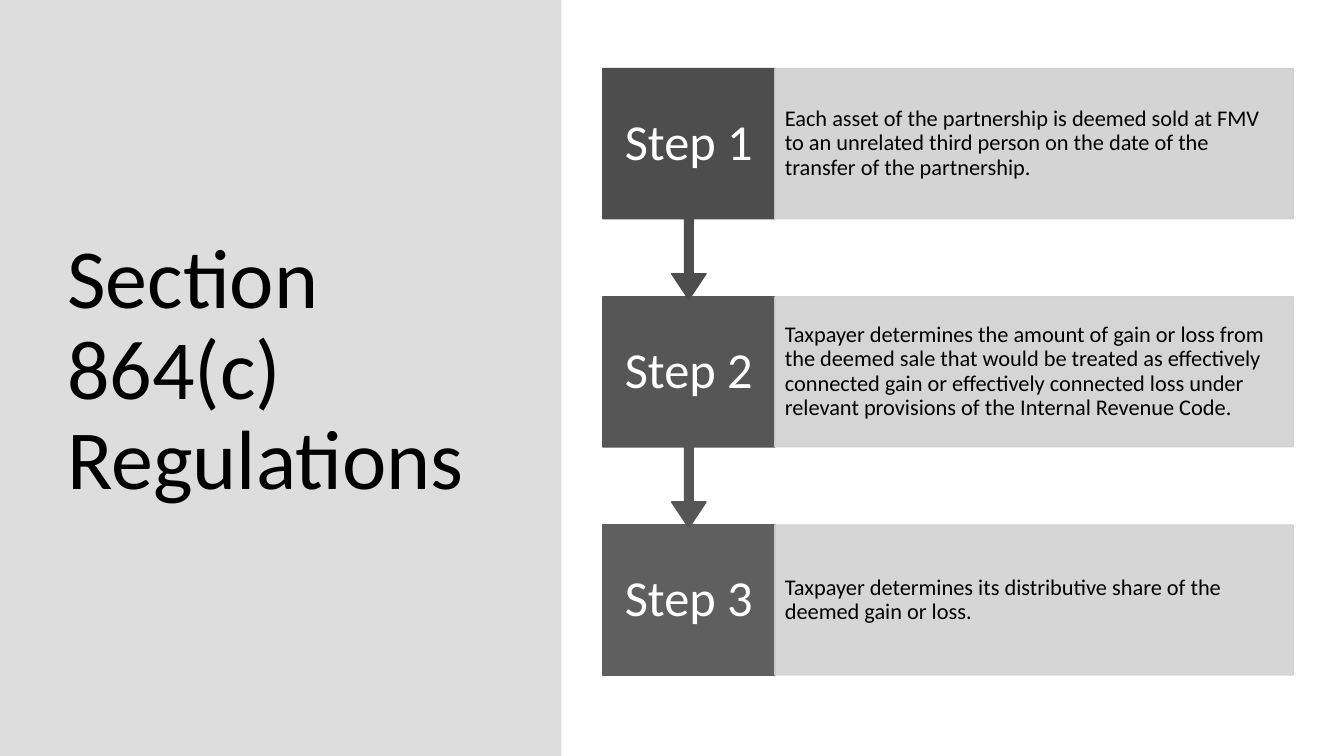
from dataclasses import dataclass

from pptx import Presentation
from pptx.dml.color import RGBColor
from pptx.enum.shapes import MSO_SHAPE as Preset
from pptx.enum.text import MSO_ANCHOR as Anchor, PP_ALIGN as Align
from pptx.oxml.ns import qn
from pptx.oxml.xmlchemy import OxmlElement
from pptx.shapes.autoshape import Shape
from pptx.shapes.shapetree import SlideShapes
from pptx.util import Cm, Pt

COLORS = {
    "panel": "DDDDDD",
    "dark_text": "000000",
    "light_text": "FFFFFF",
}
FONT = "Calibri"
SLIDE_WIDTH, SLIDE_HEIGHT = 33.87, 19.05
PANEL_WIDTH = 14.15
STEP_LEFT, STEP_WIDTH = 15.19, 4.34
DETAIL_WIDTH = 13.06
FIRST_TOP, STEP_PITCH = 1.73, 5.75
BOX_HEIGHT, CALLOUT_HEIGHT = 3.78, 5.82
CALLOUT_ADJUSTMENTS = (0.05, 0.1, 0.15, 0.65)


@dataclass(frozen=True)
class Step:
    label: str
    detail: str
    label_fill: str
    detail_fill: str


STEPS = [
    Step(
        "Step 1",
        "Each asset of the partnership is deemed sold at FMV to an unrelated "
        "third person on the date of the transfer of the partnership.",
        "4D4D4D",
        "D0D0D0",
    ),
    Step(
        "Step 2",
        "Taxpayer determines the amount of gain or loss from the deemed sale "
        "that would be treated as effectively connected gain or effectively "
        "connected loss under relevant provisions of the Internal Revenue Code.",
        "565656",
        "D1D1D1",
    ),
    Step(
        "Step 3",
        "Taxpayer determines its distributive share of the deemed gain or loss.",
        "5F5F5F",
        "D2D2D2",
    ),
]


def add_filled_shape(shapes: SlideShapes, preset: Preset, left: float, top: float,
                     width: float, height: float, color: str) -> Shape:
    shape = shapes.add_shape(preset, Cm(left), Cm(top), Cm(width), Cm(height))
    shape.shadow.inherit = False
    shape.fill.solid()
    shape.fill.fore_color.rgb = RGBColor.from_string(color)
    shape.line.fill.background()
    return shape


def outline(shape: Shape, color: str) -> None:
    shape.line.color.rgb = RGBColor.from_string(color)
    shape.line.width = Pt(1)


def set_opacity(shape: Shape, percent: int) -> None:
    """Apply one opacity to both the fill and the outline."""
    for color in shape._element.spPr.iter(qn("a:srgbClr")):
        alpha = OxmlElement("a:alpha")
        alpha.set("val", str(percent * 1000))
        color.append(alpha)


def write_text(shape: Shape, text: str, size: int, color: str, align: Align = Align.LEFT,
               inset_x: float = 0.25, inset_y: float = 0.13) -> None:
    frame = shape.text_frame
    frame.word_wrap = True
    frame.vertical_anchor = Anchor.MIDDLE
    frame.margin_left = frame.margin_right = Cm(inset_x)
    frame.margin_top = frame.margin_bottom = Cm(inset_y)
    paragraph = frame.paragraphs[0]
    paragraph.text = text
    paragraph.alignment = align
    paragraph.line_spacing = 0.9
    paragraph.font.name = FONT
    paragraph.font.size = Pt(size)
    paragraph.font.color.rgb = RGBColor.from_string(color)


def add_title_panel(shapes: SlideShapes) -> None:
    add_filled_shape(shapes, Preset.RECTANGLE, 0, 0, PANEL_WIDTH, SLIDE_HEIGHT,
                     COLORS["panel"])
    title = shapes.add_textbox(Cm(1.45), Cm(1.73), Cm(10.57), Cm(15.29))
    write_text(title, "Section 864(c) Regulations", 60, COLORS["dark_text"])


def add_step(shapes: SlideShapes, step: Step, top: float, is_last: bool) -> None:
    """Draw a step's label and detail; all but the last point to the next step."""
    preset = Preset.RECTANGLE if is_last else Preset.DOWN_ARROW_CALLOUT
    height = BOX_HEIGHT if is_last else CALLOUT_HEIGHT
    label = add_filled_shape(shapes, preset, STEP_LEFT, top, STEP_WIDTH, height,
                             step.label_fill)
    if not is_last:
        for index, value in enumerate(CALLOUT_ADJUSTMENTS):
            label.adjustments[index] = value
    outline(label, step.label_fill)
    write_text(label, step.label, 36, COLORS["light_text"], Align.CENTER, 0.3, 0.71)

    detail = add_filled_shape(shapes, Preset.RECTANGLE, STEP_LEFT + STEP_WIDTH, top,
                              DETAIL_WIDTH, BOX_HEIGHT, step.detail_fill)
    outline(detail, step.detail_fill)
    set_opacity(detail, 90)
    write_text(detail, step.detail, 16, COLORS["dark_text"], inset_y=0.56)


def main() -> None:
    presentation = Presentation()
    presentation.slide_width = Cm(SLIDE_WIDTH)
    presentation.slide_height = Cm(SLIDE_HEIGHT)
    slide = presentation.slides.add_slide(presentation.slide_layouts[6])
    add_title_panel(slide.shapes)
    last = len(STEPS) - 1
    # The arrows overlap the box below, so the bottom step is drawn first.
    for index in range(last, -1, -1):
        add_step(slide.shapes, STEPS[index], FIRST_TOP + index * STEP_PITCH, index == last)
    presentation.save("out.pptx")


if __name__ == "__main__":
    main()
